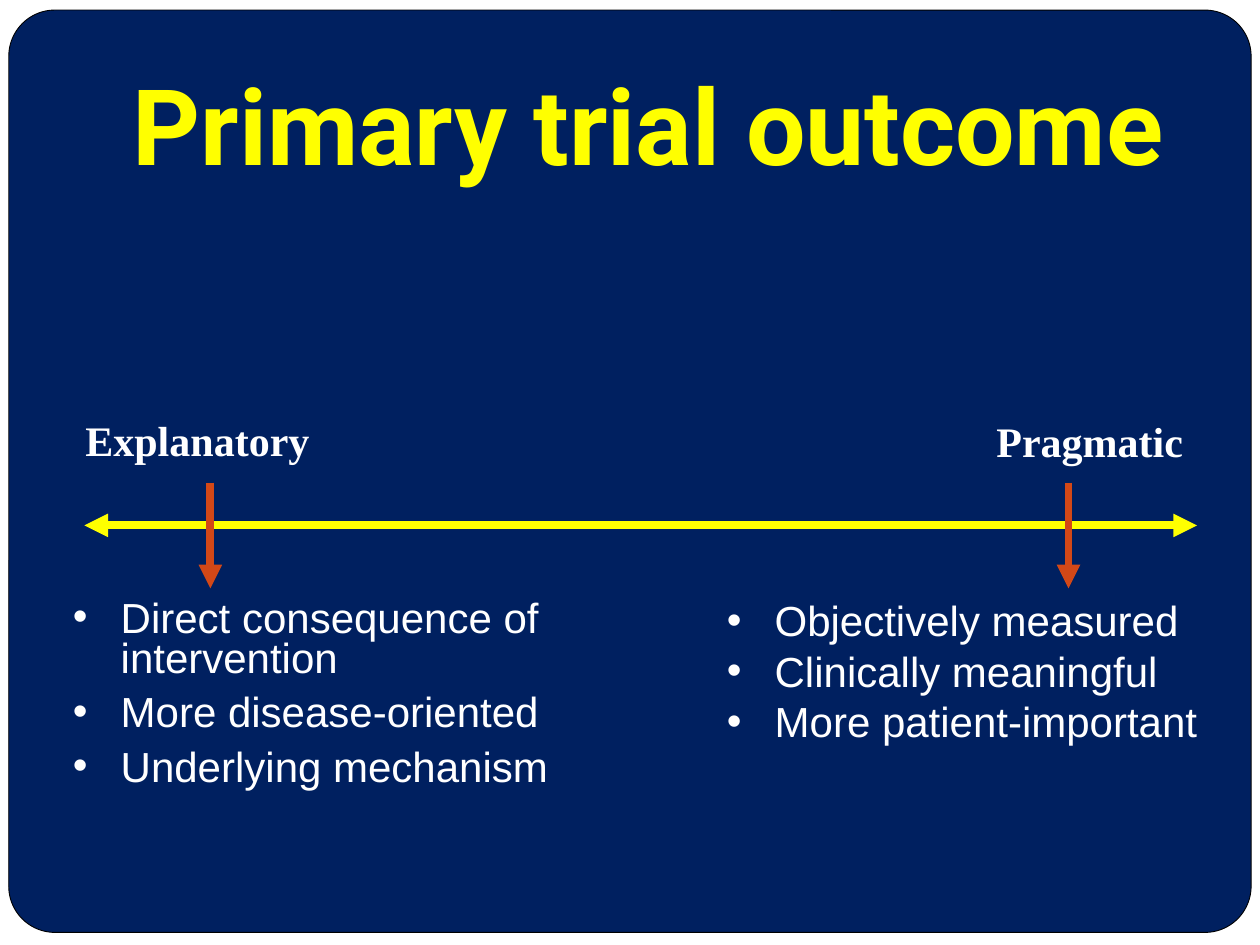
from dataclasses import dataclass

from lxml import etree
from pptx import Presentation
from pptx.dml.color import RGBColor
from pptx.enum.shapes import MSO_CONNECTOR, MSO_SHAPE
from pptx.enum.text import MSO_ANCHOR, PP_ALIGN
from pptx.oxml.ns import qn
from pptx.util import Inches, Pt

LINE = MSO_CONNECTOR.STRAIGHT
RECT, ROUND = MSO_SHAPE.RECTANGLE, MSO_SHAPE.ROUNDED_RECTANGLE
TOP, BOTTOM = MSO_ANCHOR.TOP, MSO_ANCHOR.BOTTOM
LEFT, CENTER = PP_ALIGN.LEFT, PP_ALIGN.CENTER


@dataclass(frozen=True)
class Theme:
    navy: str = "002060"
    white: str = "FFFFFF"
    black: str = "000000"
    yellow: str = "FFFF00"
    orange: str = "D34817"
    head: str = "Roboto"
    body: str = "Arial"
    label: str = "Times New Roman"
    title_pt: float = 60.3
    text_pt: float = 24
    arrow_pt: float = 4.5


@dataclass(frozen=True)
class Box:
    x: float
    y: float
    w: float
    h: float

    def place(self) -> tuple:
        return tuple(Inches(n) for n in (self.x, self.y, self.w, self.h))


@dataclass(frozen=True)
class Side:
    name: str
    name_box: Box
    arrow_x: float
    points: tuple
    list_box: Box
    wrap: bool = True
    spacing: float | None = None
    before: float = 0


T = Theme()
AXIS_Y, AXIS_X = 4.17, (0.67, 9.5)
ARROW_Y = (3.83, 4.67)
INDENT = 0.38

SIDES = (
    Side("Explanatory", Box(0.58, 3.24, 2.33, 0.5), 1.67,
         ("Direct consequence of intervention", "More disease-oriented",
          "Underlying mechanism"),
         Box(0.48, 4.72, 4.1, 1.64), spacing=0.8, before=8),
    Side("Pragmatic", Box(7.81, 3.25, 1.83, 0.5), 8.48,
         ("Objectively measured", "Clinically meaningful",
          "More patient-important"),
         Box(5.67, 4.67, 4.33, 1.31), wrap=False),
)


def paint(fill, color: str) -> None:
    fill.solid()
    fill.fore_color.rgb = RGBColor.from_string(color)


def add_panel(slide, kind, box: Box, color: str):
    panel = slide.shapes.add_shape(kind, *box.place())
    panel.shadow.inherit = False
    paint(panel.fill, color)
    panel.line.fill.background()
    return panel


def add_text(slide, box: Box, *lines: str, font: str = T.body,
             size: float = T.text_pt, color: str = T.white,
             bold: bool = False, align=LEFT, anchor=TOP, wrap: bool = True,
             foot: float = 0.05, bullet: bool = False,
             spacing: float | None = None, before: float = 0) -> None:
    frame = slide.shapes.add_textbox(*box.place()).text_frame
    frame.word_wrap = wrap
    frame.vertical_anchor = anchor
    frame.margin_bottom = Inches(foot)
    for i, line in enumerate(lines):
        para = frame.paragraphs[0] if i == 0 else frame.add_paragraph()
        para.alignment = align
        para.space_before = Pt(before)
        if spacing:
            para.line_spacing = spacing
        if bullet:
            props = para._p.get_or_add_pPr()
            props.set("marL", str(Inches(INDENT)))
            props.set("indent", str(-Inches(INDENT)))
            etree.SubElement(props, qn("a:buFont")).set("typeface", T.body)
            etree.SubElement(props, qn("a:buChar")).set("char", "•")
        run = para.add_run()
        run.text = line
        run.font.name = font
        run.font.size = Pt(size)
        run.font.bold = bold
        run.font.color.rgb = RGBColor.from_string(color)


def add_arrow(slide, x1: float, y1: float, x2: float, y2: float,
              color: str, both: bool = False) -> None:
    ends = (Inches(n) for n in (x1, y1, x2, y2))
    arrow = slide.shapes.add_connector(LINE, *ends)
    paint(arrow.line.fill, color)
    arrow.line.width = Pt(T.arrow_pt)
    stroke = arrow.line._get_or_add_ln()
    for tip in ("a:headEnd", "a:tailEnd") if both else ("a:tailEnd",):
        etree.SubElement(stroke, qn(tip)).set("type", "triangle")
    etree.SubElement(arrow._element.spPr, qn("a:effectLst"))


def main() -> None:
    deck = Presentation()
    deck.slide_width, deck.slide_height = Inches(10), Inches(7.5)
    slide = deck.slides.add_slide(deck.slide_layouts[6])

    # Backdrop
    paint(slide.background.fill, T.navy)
    add_panel(slide, RECT, Box(0, 0, 10, 7.5), T.white)
    card = add_panel(slide, ROUND, Box(0.07, 0.08, 9.86, 7.32), T.navy)
    card.adjustments[0] = 0.05
    paint(card.line.fill, T.black)
    card.line.width = Pt(0.5)

    # Title
    add_text(slide, Box(0.51, 0.33, 9.27, 1.25), "Primary trial outcome",
             font=T.head, size=T.title_pt, color=T.yellow, bold=True,
             align=CENTER, anchor=BOTTOM, foot=0.1)

    # Axis from explanatory to pragmatic
    add_arrow(slide, AXIS_X[0], AXIS_Y, AXIS_X[1], AXIS_Y, T.yellow, both=True)

    # Label, pointer and list at each end
    for side in SIDES:
        add_text(slide, side.name_box, side.name, font=T.label, bold=True,
                 wrap=side.wrap)
        add_arrow(slide, side.arrow_x, ARROW_Y[0], side.arrow_x, ARROW_Y[1],
                  T.orange)
        add_text(slide, side.list_box, *side.points, bullet=True,
                 spacing=side.spacing, before=side.before)

    deck.save("out.pptx")


if __name__ == "__main__":
    main()
